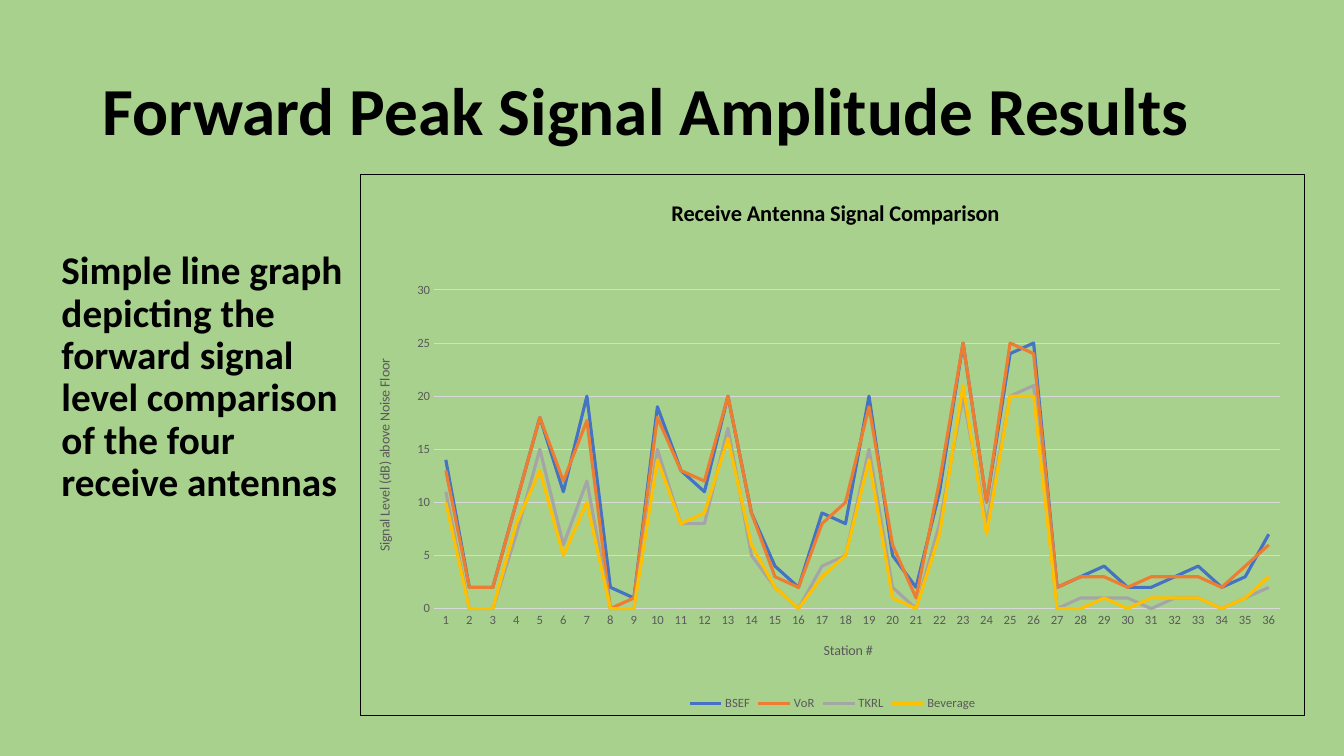
from lxml import etree
from pptx import Presentation
from pptx.chart.data import CategoryChartData
from pptx.dml.color import RGBColor
from pptx.enum.chart import XL_CHART_TYPE, XL_LEGEND_POSITION, XL_MARKER_STYLE, XL_TICK_MARK
from pptx.enum.text import MSO_ANCHOR, MSO_AUTO_SIZE, PP_ALIGN
from pptx.oxml import parse_xml
from pptx.oxml.ns import nsdecls, qn
from pptx.util import Inches, Pt

GREEN = RGBColor(0xA9, 0xD1, 0x8E)
BLACK = RGBColor(0, 0, 0)
DARK_GRAY = RGBColor(0x59, 0x59, 0x59)
LIGHT_GRAY = RGBColor(0xD9, 0xD9, 0xD9)
BLUE = RGBColor(0x44, 0x72, 0xC4)
ORANGE = RGBColor(0xED, 0x7D, 0x31)
GRAY = RGBColor(0xA5, 0xA5, 0xA5)
YELLOW = RGBColor(0xFF, 0xC0, 0x00)
FONT = "Calibri"

# Signal level per station for each antenna
ANTENNAS = [
    ("BSEF", BLUE, [14, 2, 2, 10, 18, 11, 20, 2, 1, 19, 13, 11, 20, 9, 4, 2, 9, 8,
                    20, 5, 2, 11, 25, 10, 24, 25, 2, 3, 4, 2, 2, 3, 4, 2, 3, 7]),
    ("VoR", ORANGE, [13, 2, 2, 10, 18, 12, 17.7, 0, 1, 18, 13, 12, 20, 9, 3, 2, 8, 10,
                     19, 6, 1, 12, 25, 10, 25, 24, 2, 3, 3, 2, 3, 3, 3, 2, 4, 6]),
    ("TKRL", GRAY, [11, 0, 0, 7, 15, 6, 12, 0, 0, 15, 8, 8, 17, 5, 2, 0, 4, 5,
                    15, 2, 0, 8, 20, 8, 20, 21, 0, 1, 1, 1, 0, 1, 1, 0, 1, 2]),
    ("Beverage", YELLOW, [10, 0, 0, 8, 13, 5, 10, 0, 0, 14, 8, 9, 16, 6, 2, 0, 3, 5,
                          14, 1, 0, 7, 21, 7, 20, 20, 0, 0, 1, 0, 1, 1, 1, 0, 1, 3]),
]


def format_font(font, size, color=BLACK, bold=False):
    font.name = FONT
    font.size = Pt(size)
    font.bold = bold
    font.color.rgb = color


def write_text(text_frame, text, size, color=BLACK, bold=False, align=None, spacing=None, before=0):
    paragraph = text_frame.paragraphs[0]
    paragraph.alignment = align
    if spacing:
        paragraph.line_spacing = spacing
        paragraph.space_before = Pt(before)
    run = paragraph.add_run()
    run.text = text
    format_font(run.font, size, color, bold)
    return paragraph


def fill_placeholder(placeholder, box, text, size, anchor, before=0):
    placeholder.left, placeholder.top, placeholder.width, placeholder.height = map(Inches, box)
    text_frame = placeholder.text_frame
    text_frame.word_wrap = True
    text_frame.auto_size = MSO_AUTO_SIZE.NONE
    text_frame.vertical_anchor = anchor
    return write_text(text_frame, text, size, bold=True, align=PP_ALIGN.LEFT,
                      spacing=0.9, before=before)


def set_layout(element, **shares):
    """Place a chart part by shares of the chart's size."""
    for old_layout in element.findall(qn("c:layout")):
        element.remove(old_layout)
    layout = parse_xml(f"<c:layout {nsdecls('c')}/>")
    manual = etree.SubElement(layout, qn("c:manualLayout"))
    if "w" in shares:
        etree.SubElement(manual, qn("c:layoutTarget")).set("val", "inner")
    for key in ("x", "y"):
        etree.SubElement(manual, qn(f"c:{key}Mode")).set("val", "edge")
    for key, share in shares.items():
        etree.SubElement(manual, qn(f"c:{key}")).set("val", str(share))
    text = element.find(qn("c:tx"))
    element.insert(0 if text is None else 1, layout)


def add_chart_title(title, text, x, y, **text_format):
    write_text(title.text_frame, text, **text_format)
    set_layout(title._element, x=x, y=y)


def style_axis(axis, title, x, y):
    axis.major_tick_mark = axis.minor_tick_mark = XL_TICK_MARK.NONE
    format_font(axis.tick_labels.font, 9, DARK_GRAY)
    add_chart_title(axis.axis_title, title, x, y, size=10, color=DARK_GRAY)


def add_signal_chart(slide, box):
    chart_data = CategoryChartData()
    chart_data.categories = [str(station) for station in range(1, 37)]
    for name, _, levels in ANTENNAS:
        chart_data.add_series(name, levels)
    chart = slide.shapes.add_chart(XL_CHART_TYPE.LINE, *map(Inches, box), chart_data).chart
    format_font(chart.font, 10)

    # Frame and plot area
    border = parse_xml(
        f"<c:spPr {nsdecls('c', 'a')}><a:noFill/><a:ln w='{Pt(0.75)}'><a:solidFill>"
        f"<a:srgbClr val='{BLACK}'/></a:solidFill></a:ln></c:spPr>")
    chart_element = chart._chartSpace.find(qn("c:chart"))
    chart_element.addnext(border)
    set_layout(chart_element.find(qn("c:plotArea")), x=0.078, y=0.213, w=0.897, h=0.59)

    # Titles, axes and legend
    chart.has_title = True
    add_chart_title(chart.chart_title, "Receive Antenna Signal Comparison", 0.325, 0.035,
                    size=16, bold=True)
    chart.chart_title.include_in_layout = False
    style_axis(chart.category_axis, "Station #", 0.488, 0.858)
    chart.category_axis.format.line.color.rgb = LIGHT_GRAY
    chart.category_axis.format.line.width = Pt(0.75)
    value_axis = chart.value_axis
    style_axis(value_axis, "Signal Level (dB) above Noise Floor", 0.013, 0.336)
    value_axis.minimum_scale, value_axis.maximum_scale, value_axis.major_unit = 0, 30, 5
    value_axis.format.line.fill.background()
    value_axis.major_gridlines.format.line.color.rgb = LIGHT_GRAY
    value_axis.major_gridlines.format.line.width = Pt(0.75)
    chart.has_legend = True
    chart.legend.position = XL_LEGEND_POSITION.BOTTOM
    chart.legend.include_in_layout = False
    format_font(chart.legend.font, 9, DARK_GRAY)

    # Antenna lines
    chart.plots[0].vary_by_categories = False
    for series, (_, color, _) in zip(chart.plots[0].series, ANTENNAS):
        series.smooth = False
        series.marker.style = XL_MARKER_STYLE.NONE
        series.format.line.color.rgb = color
        series.format.line.width = Pt(2.25)


def build_results_slide(presentation):
    slide = presentation.slides.add_slide(presentation.slide_layouts[3])
    slide.background.fill.solid()
    slide.background.fill.fore_color.rgb = GREEN
    title, description, spare = slide.placeholders
    spare._element.getparent().remove(spare._element)

    fill_placeholder(title, (0.92, 0.4, 11.5, 1.45),
                     "Forward Peak Signal Amplitude Results", 48, MSO_ANCHOR.MIDDLE)
    paragraph = fill_placeholder(
        description, (0.51, 2.44, 3.05, 3.21),
        "Simple line graph depicting the forward signal level comparison "
        "of the four receive antennas", 28, MSO_ANCHOR.TOP, before=10)
    properties = paragraph._p.get_or_add_pPr()
    properties.set("marL", "0")
    properties.set("indent", "0")
    etree.SubElement(properties, qn("a:buNone"))
    add_signal_chart(slide, (3.57, 1.73, 9.37, 5.37))


def main():
    presentation = Presentation()
    presentation.slide_width = Inches(13.33)
    presentation.slide_height = Inches(7.5)
    build_results_slide(presentation)
    presentation.save("out.pptx")


if __name__ == "__main__":
    main()
